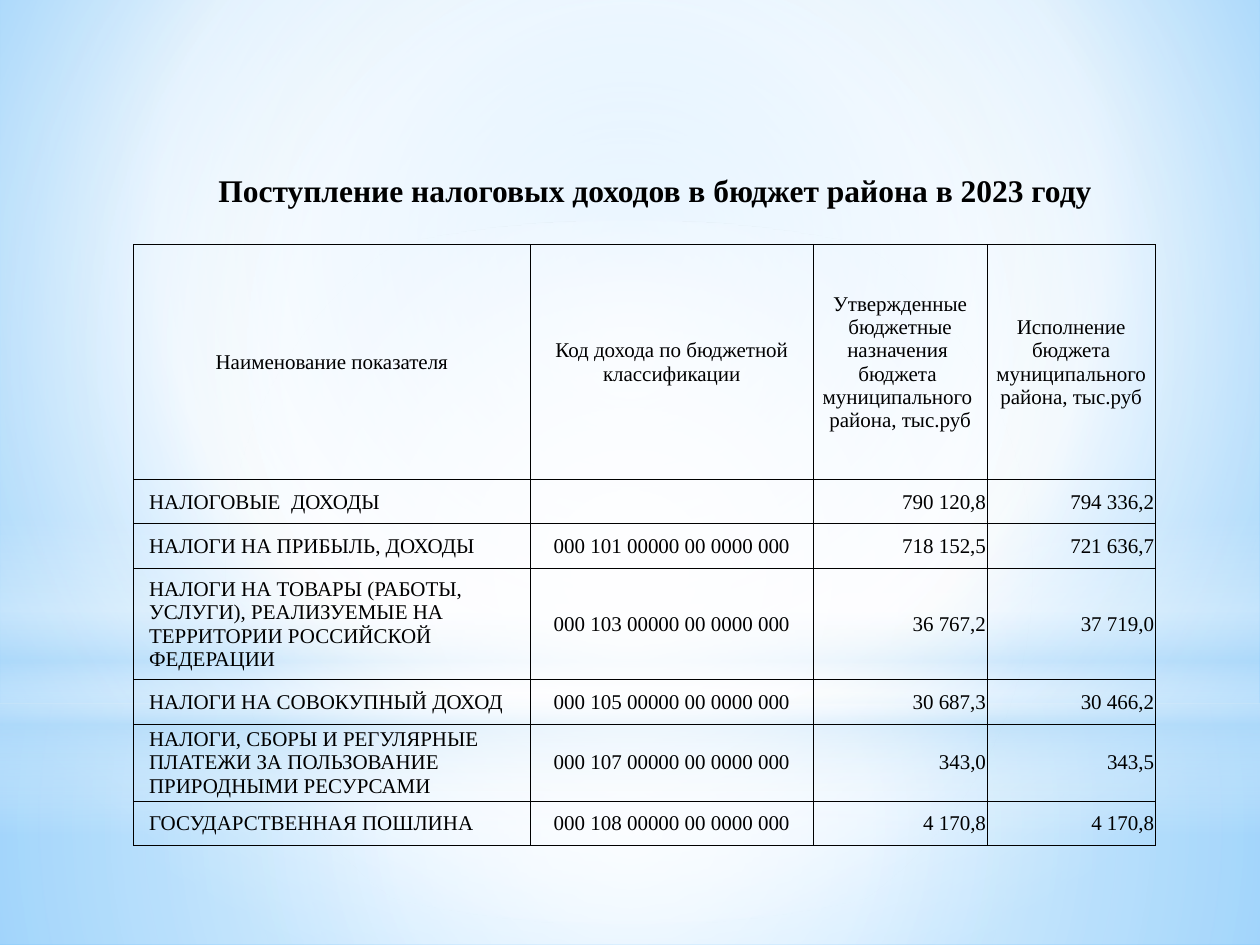
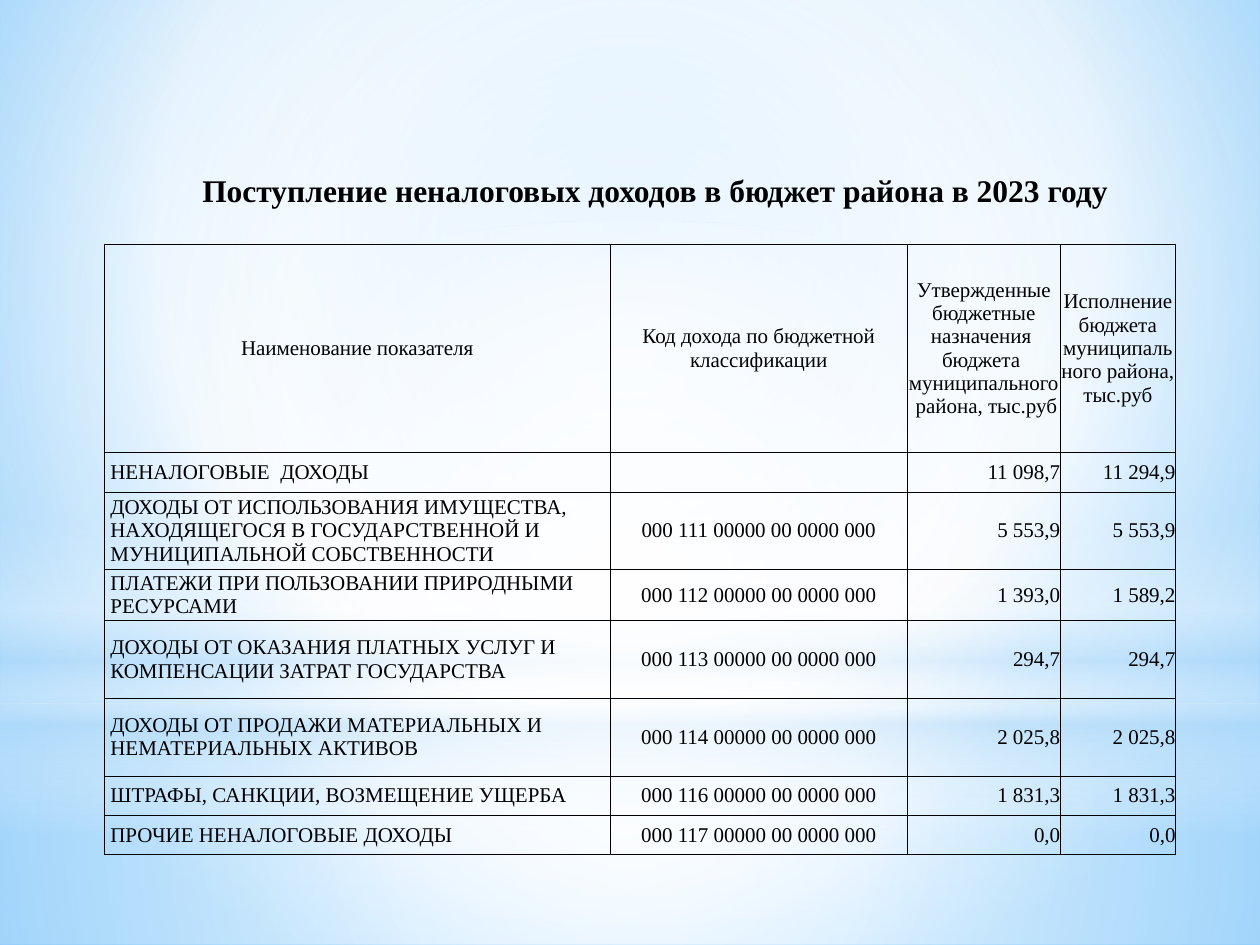
from dataclasses import dataclass
from typing import NamedTuple, Optional

from lxml import etree
from pptx import Presentation
from pptx.dml.color import RGBColor
from pptx.enum import shapes as es, text as et
from pptx.oxml.ns import qn
from pptx.util import Pt

# Shared look
FONT = "Times New Roman"
BLACK = RGBColor(0x00, 0x00, 0x00)
WHITE = RGBColor(0xFF, 0xFF, 0xFF)
SKY = RGBColor(0x9E, 0xD5, 0xFF)
AZURE = RGBColor(0x5B, 0xB9, 0xFF)
MIST = RGBColor(0xB4, 0xDC, 0xFA)
WIDE, HIGH = 720, 540
SPLIT = 401.8
TITLE = (65.5, 94.3, 617.8, 28.8)
TOP = 139.7
LEFT, MID, RIGHT = et.PP_ALIGN.LEFT, et.PP_ALIGN.CENTER, et.PP_ALIGN.RIGHT
HEADS = (
    "Наименование показателя",
    "Код дохода по бюджетной классификации",
    "Утвержденные бюджетные назначения  бюджета  муниципального  района, тыс.руб",
    "Исполнение бюджета муниципального района, тыс.руб",
)


class Stop(NamedTuple):
    pos: int
    color: RGBColor
    alpha: int = 100


class Band(NamedTuple):
    form: es.MSO_SHAPE
    box: tuple
    stops: tuple
    focus: Optional[tuple] = (50, 50, 50, 50)  # None: top to bottom


class Item(NamedTuple):
    name: str
    code: Optional[int]
    plan: str
    fact: str


@dataclass
class Page:
    title: str
    left: float
    cols: tuple
    rows: tuple
    pad: float  # cell margin
    indent: float  # left margin of the names
    items: tuple


BACK = (Stop(0, SKY), Stop(60, WHITE), Stop(100, AZURE))
BANDS = (
    Band(es.MSO_SHAPE.RECTANGLE, (0, SPLIT, WIDE, HIGH - SPLIT),
         (Stop(0, WHITE, 91), Stop(37, WHITE, 76), Stop(100, MIST, 79))),
    Band(es.MSO_SHAPE.RECTANGLE, (0, 0, WIDE, SPLIT),
         (Stop(0, WHITE, 89), Stop(48, WHITE, 62), Stop(100, MIST, 79))),
    Band(es.MSO_SHAPE.RECTANGLE, (0, 296.6, WIDE, 180),
         (Stop(0, WHITE, 0), Stop(29, WHITE, 30), Stop(45, MIST, 40),
          Stop(55, WHITE, 26), Stop(65, MIST, 60), Stop(100, WHITE, 0)), None),
    Band(es.MSO_SHAPE.OVAL, (0, 126, WIDE, SPLIT),
         (Stop(0, WHITE), Stop(56, WHITE, 0))),
)

PAGES = (
    Page("Поступление налоговых доходов в бюджет района в 2023 году",
         76.3, (226.8, 161.6, 99.4, 96.1),
         (134.2, 25.4, 25.4, 63.6, 25.4, 44, 25.2), 0.6, 8.9, (
             Item("НАЛОГОВЫЕ  ДОХОДЫ", None, "790 120,8", "794 336,2"),
             Item("НАЛОГИ НА ПРИБЫЛЬ, ДОХОДЫ", 101, "718 152,5", "721 636,7"),
             Item("НАЛОГИ НА ТОВАРЫ (РАБОТЫ, УСЛУГИ), РЕАЛИЗУЕМЫЕ НА "
                  "ТЕРРИТОРИИ РОССИЙСКОЙ ФЕДЕРАЦИИ", 103, "36 767,2", "37 719,0"),
             Item("НАЛОГИ НА СОВОКУПНЫЙ ДОХОД", 105, "30 687,3", "30 466,2"),
             Item("НАЛОГИ, СБОРЫ И РЕГУЛЯРНЫЕ ПЛАТЕЖИ ЗА ПОЛЬЗОВАНИЕ "
                  "ПРИРОДНЫМИ РЕСУРСАМИ", 107, "343,0", "343,5"),
             Item("ГОСУДАРСТВЕННАЯ ПОШЛИНА", 108, "4 170,8", "4 170,8"),
         )),
    Page("Поступление неналоговых доходов в бюджет района в 2023 году",
         59.7, (289.1, 169.7, 87.4, 65.9),
         (118.8, 22.6, 44.5, 29.1, 44.4, 44.4, 22.5, 22.5), 0, 3.4, (
             Item("НЕНАЛОГОВЫЕ  ДОХОДЫ", None, "11 098,7", "11 294,9"),
             Item("ДОХОДЫ ОТ ИСПОЛЬЗОВАНИЯ ИМУЩЕСТВА, НАХОДЯЩЕГОСЯ В "
                  "ГОСУДАРСТВЕННОЙ И МУНИЦИПАЛЬНОЙ СОБСТВЕННОСТИ",
                  111, "5 553,9", "5 553,9"),
             Item("ПЛАТЕЖИ ПРИ ПОЛЬЗОВАНИИ ПРИРОДНЫМИ РЕСУРСАМИ",
                  112, "1 393,0", "1 589,2"),
             Item("ДОХОДЫ ОТ ОКАЗАНИЯ ПЛАТНЫХ УСЛУГ И КОМПЕНСАЦИИ ЗАТРАТ "
                  "ГОСУДАРСТВА", 113, "294,7", "294,7"),
             Item("ДОХОДЫ ОТ ПРОДАЖИ МАТЕРИАЛЬНЫХ И НЕМАТЕРИАЛЬНЫХ АКТИВОВ",
                  114, "2 025,8", "2 025,8"),
             Item("ШТРАФЫ, САНКЦИИ, ВОЗМЕЩЕНИЕ УЩЕРБА", 116, "1 831,3", "1 831,3"),
             Item("ПРОЧИЕ НЕНАЛОГОВЫЕ ДОХОДЫ", 117, "0,0", "0,0"),
         )),
)


def add(host, tag: str, **attrs):
    return etree.SubElement(host, qn(tag), {k: str(v) for k, v in attrs.items()})


def blend(host, fill, stops: tuple, focus: Optional[tuple]) -> None:
    """Give the fill inside host a gradient with its own stops."""
    fill.gradient()
    grad = host.find(".//" + qn("a:gradFill"))
    for part in list(grad):
        grad.remove(part)
    group = add(grad, "a:gsLst")
    for stop in stops:
        mark = add(group, "a:gs", pos=stop.pos * 1000)
        color = add(mark, "a:srgbClr", val=stop.color)
        if stop.alpha < 100:
            add(color, "a:alpha", val=stop.alpha * 1000)
    if focus is None:
        add(grad, "a:lin", ang=5400000, scaled=0)
    else:
        ring = add(grad, "a:path", path="circle")
        add(ring, "a:fillToRect", **{k: v * 1000 for k, v in zip("ltrb", focus)})


def dress(layout, slide) -> None:
    """Put the background and its bands on the layout."""
    blend_back = layout.background.fill
    blend(layout.element, blend_back, BACK, (20, 10, 20, 60))
    tree = layout.element.find(".//" + qn("p:spTree"))
    for band in BANDS:
        shape = slide.shapes.add_shape(band.form, *map(Pt, band.box))
        shape.shadow.inherit = False
        shape.line.fill.background()
        blend(shape.element, shape.fill, band.stops, band.focus)
        tree.append(shape.element)


def write(frame, words: str, size: float, align, bold: bool = False) -> None:
    frame.word_wrap = True
    frame.text = words
    for para in frame.paragraphs:
        para.alignment = align
        for run in para.runs:
            font = run.font
            font.name, font.size, font.bold = FONT, Pt(size), bold
            font.color.rgb = BLACK


def frame_cell(cell) -> None:
    """Clear fill with a thin black border on each side."""
    cell.fill.background()
    props = cell._tc.get_or_add_tcPr()
    for i, side in enumerate("LRTB"):
        line = add(props, "a:ln" + side, w=Pt(0.5))
        add(add(line, "a:solidFill"), "a:srgbClr", val=BLACK)
        props.insert(i, line)


def fill_table(slide, page: Page) -> None:
    shape = slide.shapes.add_table(
        len(page.rows), len(page.cols), Pt(page.left), Pt(TOP),
        Pt(sum(page.cols)), Pt(sum(page.rows)))
    table = shape.table
    table.first_row = table.horz_banding = False
    for col, width in zip(table.columns, page.cols):
        col.width = Pt(width)
    for row, height in zip(table.rows, page.rows):
        row.height = Pt(height)
    lines = [HEADS]
    for item in page.items:
        code = f"000 {item.code} 00000 00 0000 000" if item.code else ""
        lines.append((item.name, code, item.plan, item.fact))
    for r, line in enumerate(lines):
        aligns = (LEFT, MID, RIGHT, RIGHT) if r else (MID,) * 4
        for c, (words, align) in enumerate(zip(line, aligns)):
            cell = table.cell(r, c)
            cell.margin_left = Pt(page.indent if r and not c else page.pad)
            cell.margin_top = cell.margin_right = Pt(page.pad)
            cell.margin_bottom = 0
            cell.vertical_anchor = et.MSO_ANCHOR.MIDDLE
            write(cell.text_frame, words, 12, align)
            frame_cell(cell)


def main() -> None:
    deck = Presentation()
    deck.slide_width, deck.slide_height = Pt(WIDE), Pt(HIGH)
    blank = deck.slide_layouts[6]
    for i, page in enumerate(PAGES):
        slide = deck.slides.add_slide(blank)
        if i == 0:
            dress(blank, slide)
        fill_table(slide, page)
        title = slide.shapes.add_textbox(*map(Pt, TITLE))
        write(title.text_frame, page.title, 18, MID, True)
    deck.save("out.pptx")


if __name__ == "__main__":
    main()
